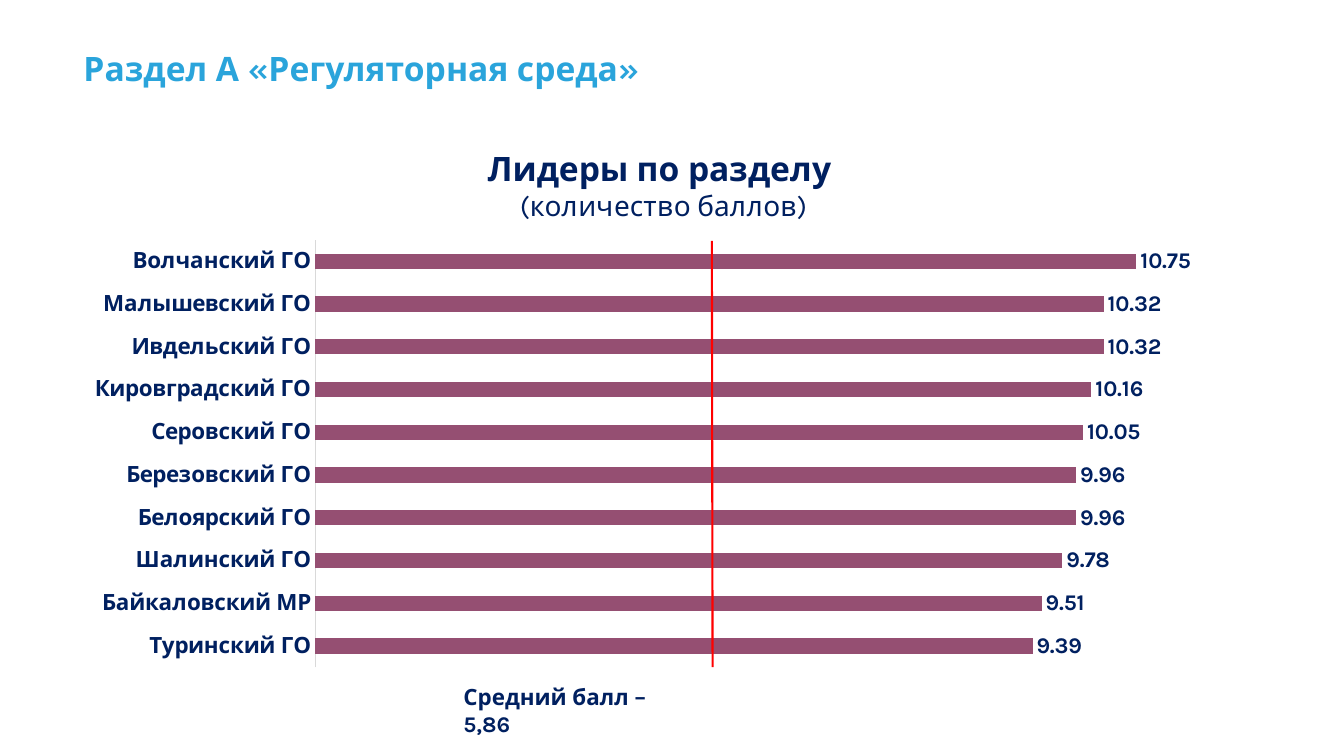
from lxml import etree
from pptx import Presentation
from pptx.chart.data import CategoryChartData
from pptx.dml.color import RGBColor
from pptx.enum.chart import XL_CHART_TYPE as ChartType
from pptx.enum.chart import XL_LABEL_POSITION as LabelPosition
from pptx.enum.chart import XL_TICK_LABEL_POSITION as TickLabelPosition
from pptx.enum.chart import XL_TICK_MARK as TickMark
from pptx.enum.shapes import MSO_CONNECTOR as Connector
from pptx.enum.text import MSO_ANCHOR as Anchor
from pptx.oxml import parse_xml
from pptx.oxml.ns import nsdecls, qn
from pptx.util import Pt

NAVY = RGBColor(0x00, 0x20, 0x60)
SKY = RGBColor(0x2A, 0xA4, 0xDB)
PLUM = RGBColor(0x95, 0x4F, 0x72)
RED = RGBColor(0xFF, 0x00, 0x00)
GREY = RGBColor(0xD9, 0xD9, 0xD9)
FONT = "Karla"

LEADERS = [
    ("Волчанский ГО", 10.75),
    ("Малышевский ГО", 10.32),
    ("Ивдельский ГО", 10.32),
    ("Кировградский ГО", 10.16),
    ("Серовский ГО", 10.05),
    ("Березовский ГО", 9.96),
    ("Белоярский ГО", 9.96),
    ("Шалинский ГО", 9.78),
    ("Байкаловский МР", 9.51),
    ("Туринский ГО", 9.39),
]

# Plot area as fractions of the chart box
PLOT_LEFT, PLOT_TOP, PLOT_WIDTH, PLOT_HEIGHT = 0.206, 0.2, 0.774, 0.78


def style_font(font, size, color=NAVY, bold=True):
    font.name = FONT
    font.size = Pt(size)
    font.bold = bold
    font.color.rgb = color


def add_text(slide, box, text, size, color, anchor=Anchor.TOP):
    shape = slide.shapes.add_textbox(*map(Pt, box))
    frame = shape.text_frame
    frame.word_wrap = True
    frame.vertical_anchor = anchor
    paragraph = frame.paragraphs[0]
    paragraph.text = text
    style_font(paragraph.font, size, color)
    return paragraph


def add_heading(slide, box):
    paragraph = add_text(slide, box, "Раздел А «Регуляторная среда»", 24, SKY, Anchor.MIDDLE)
    paragraph.line_spacing = 0.9


def place_plot(chart):
    """Fix the inner plot area inside the chart box."""
    plot_area = chart._chartSpace.chart.plotArea
    for old_layout in plot_area.findall(qn("c:layout")):
        plot_area.remove(old_layout)
    layout = parse_xml(f"<c:layout {nsdecls('c')}/>")
    manual = etree.SubElement(layout, qn("c:manualLayout"))
    settings = [("layoutTarget", "inner"), ("xMode", "edge"), ("yMode", "edge"),
                ("x", PLOT_LEFT), ("y", PLOT_TOP), ("w", PLOT_WIDTH), ("h", PLOT_HEIGHT)]
    for tag, value in settings:
        etree.SubElement(manual, qn(f"c:{tag}")).set("val", str(value))
    plot_area.insert(0, layout)


def add_leaders_chart(slide, box):
    data = CategoryChartData(number_format="0.00")
    data.categories = [name for name, score in LEADERS]
    data.add_series("Series 1", [score for name, score in LEADERS])
    chart = slide.shapes.add_chart(ChartType.BAR_CLUSTERED, *map(Pt, box), data).chart
    chart.has_legend = False
    chart.font.name = "Calibri"
    chart.font.size = Pt(10)

    # Two-line title
    frame = chart.chart_title.text_frame
    frame.text = "Лидеры по разделу \n(количество баллов)"
    heading, unit = frame.paragraphs
    style_font(heading.font, 24)
    style_font(unit.font, 20, bold=False)
    chart.chart_title.include_in_layout = False

    # Axes
    names = chart.category_axis
    names.reverse_order = True
    names.major_tick_mark = names.minor_tick_mark = TickMark.NONE
    names.tick_label_position = TickLabelPosition.NEXT_TO_AXIS
    names.format.line.color.rgb = GREY
    names.format.line.width = Pt(0.75)
    style_font(names.tick_labels.font, 16)
    scores = chart.value_axis
    scores.minimum_scale, scores.maximum_scale = 0, 12
    scores.has_major_gridlines = False
    scores.visible = False

    # Bars and their labels
    plot = chart.plots[0]
    plot.gap_width = 182
    plot.vary_by_categories = False
    fill = plot.series[0].format.fill
    fill.solid()
    fill.fore_color.rgb = PLUM
    plot.has_data_labels = True
    labels = plot.data_labels
    labels.show_value = True
    labels.position = LabelPosition.OUTSIDE_END
    labels.number_format = "0.00"
    labels.number_format_is_linked = False
    style_font(labels.font, 16)
    place_plot(chart)


def add_average(slide, box):
    """Draw the average line in the box, with its caption below."""
    left, top, width, height = box
    line = slide.shapes.add_connector(
        Connector.STRAIGHT, Pt(left), Pt(top), Pt(left + width), Pt(top + height))
    line.line.color.rgb = RED
    line.line.width = Pt(1.5)
    etree.SubElement(line._element.spPr, qn("a:effectLst"))
    caption_box = (left - 184.5, top + height + 8, 175, 26.6)
    add_text(slide, caption_box, "Средний балл – 5,86", 16, NAVY)


def main():
    presentation = Presentation()
    presentation.slide_width, presentation.slide_height = Pt(960), Pt(540)
    slide = presentation.slides.add_slide(presentation.slide_layouts[6])
    add_leaders_chart(slide, (51, 93, 846, 391.7))
    add_heading(slide, (52.5, 8.6, 698.5, 84.2))
    add_average(slide, (508.5, 172, 0.5, 304.6))
    presentation.save("out.pptx")


if __name__ == "__main__":
    main()
